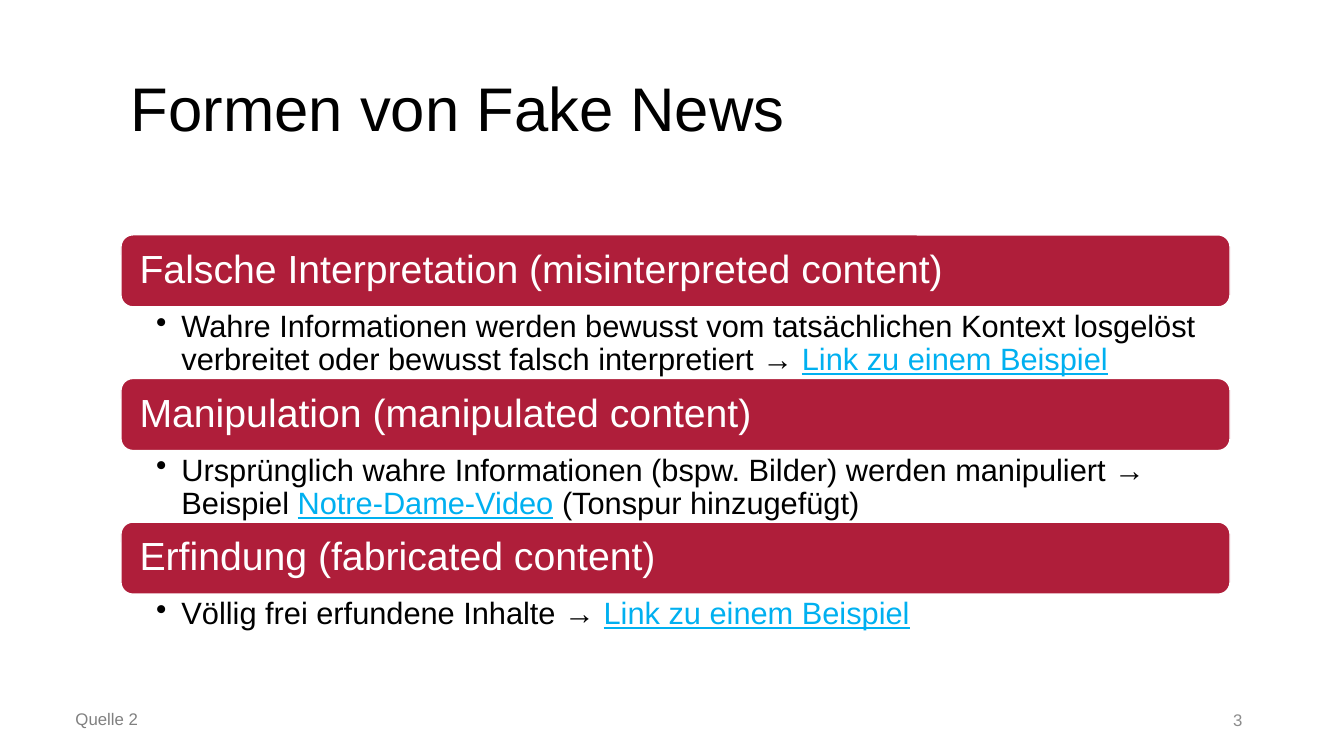
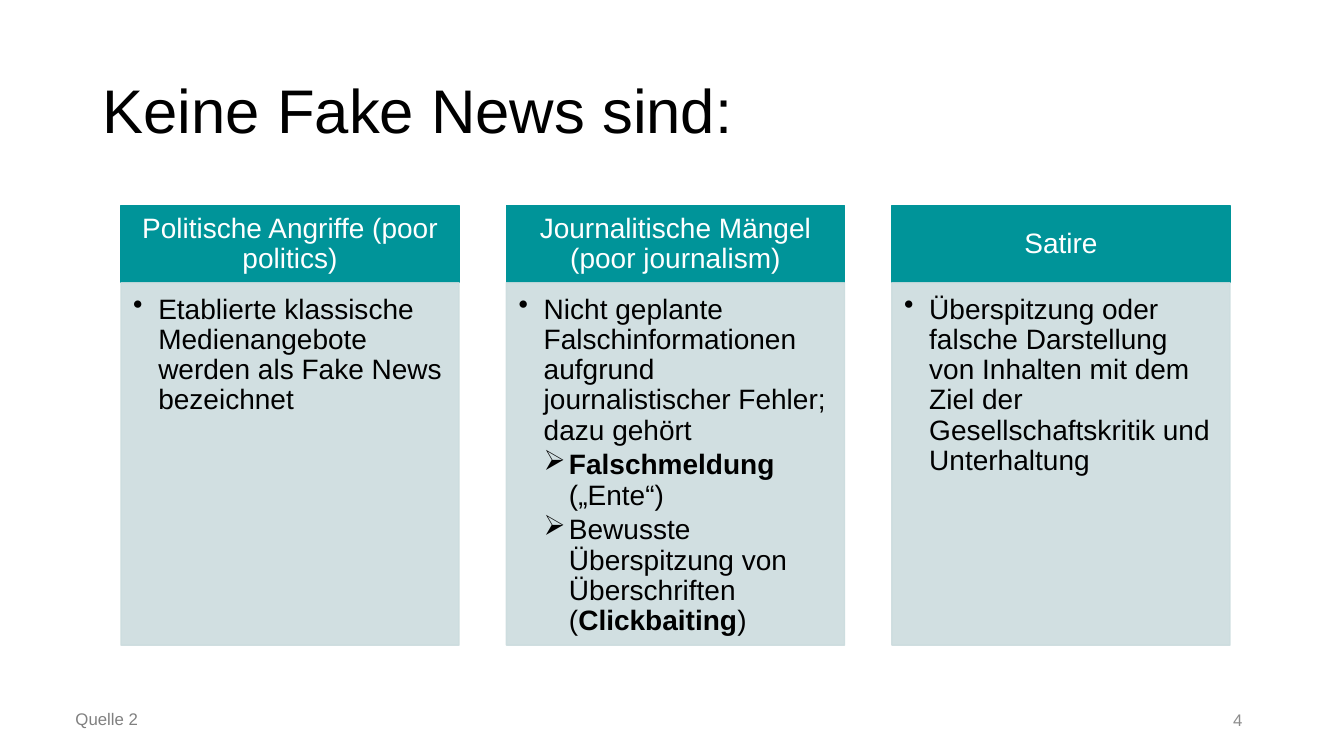
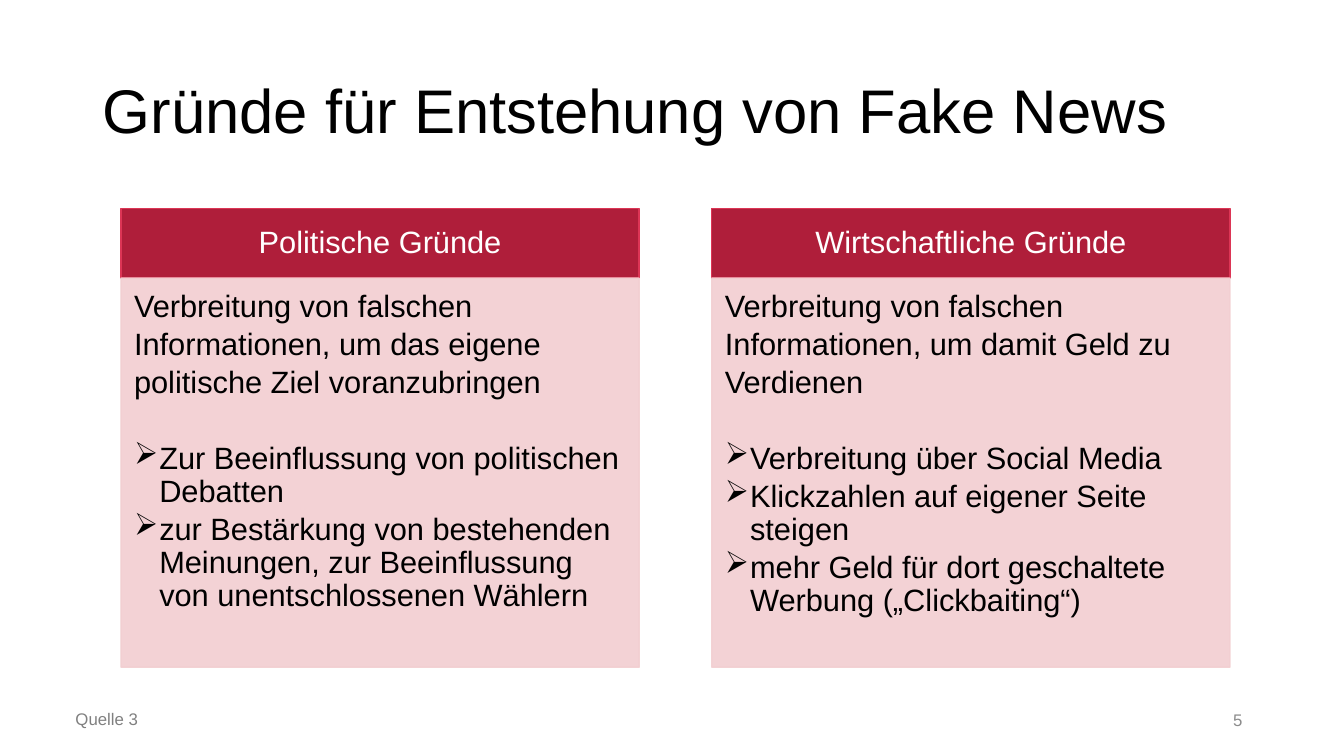
from dataclasses import dataclass

from pptx import Presentation
from pptx import util as u
from pptx.dml.color import RGBColor
from pptx.enum import shapes, text
from pptx.oxml import ns, xmlchemy


@dataclass(frozen=True)
class Theme:
    font: str = "Arial"
    black: str = "000000"
    white: str = "FFFFFF"
    red: str = "AF1E3A"
    red_edge: str = "DC3555"
    pink: str = "F2CED1"
    teal: str = "009499"
    mist: str = "CCDCDE"
    link: str = "00B0F0"
    source: str = "808080"
    number: str = "8C8C8C"
    title_size: float = 44
    bar_size: float = 28
    body_size: float = 22
    compact_size: float = 20
    footer_size: float = 12
    line_spacing: float = 0.9
    space_after: float = 3.3
    block_gap: float = 30.4
    hang: float = 0.25
    panel_opacity: int = 90


@dataclass(frozen=True)
class Box:
    left: float
    top: float
    width: float
    height: float

    def lengths(self):
        return [u.Inches(value) for value in (self.left, self.top, self.width, self.height)]


@dataclass(frozen=True)
class Item:
    """One paragraph: runs are (text, style) pairs, style being "", "bold" or "link"."""
    runs: tuple
    bullet: str = ""
    level: int = 1
    space_after: float = 0


@dataclass(frozen=True)
class ColumnStyle:
    header_fill: str
    header_line: str
    panel_fill: str
    size: float
    header_height: float
    header_insets: tuple
    panel_insets: tuple


THEME = Theme()
CONTENT_LEFT, CONTENT_WIDTH = 1.2, 11
COLUMN_GAP_RATIO = 0.14
DOT, ARROW = "•", "➢"
DEFAULT_INSETS = (0.1, 0.05, 0.1, 0.05)

TEAL_COLUMNS = ColumnStyle(THEME.teal, THEME.teal, THEME.mist, THEME.compact_size, 0.765,
                           (0.16, 0.09, 0.16, 0.09), (0.12, 0.12, 0.16, 0.17))
RED_COLUMNS = ColumnStyle(THEME.red, THEME.red_edge, THEME.pink, THEME.body_size, 0.69,
                          (0.17, 0.1, 0.17, 0.1), (0.13, 0.13, 0.17, 0.19))

FORMS = [
    ("Falsche Interpretation (misinterpreted content)", 0.71, Item((
        ("Wahre Informationen werden bewusst vom tatsächlichen Kontext losgelöst "
         "verbreitet oder bewusst falsch interpretiert → ", ""),
        ("Link zu einem Beispiel", "link")), DOT)),
    ("Manipulation (manipulated content)", 0.71, Item((
        ("Ursprünglich wahre Informationen (bspw. Bilder) werden manipuliert → Beispiel ", ""),
        ("Notre-Dame-Video", "link"),
        (" (Tonspur hinzugefügt)", "")), DOT)),
    ("Erfindung (fabricated content)", 0.51, Item((
        ("Völlig frei erfundene Inhalte → ", ""),
        ("Link zu einem Beispiel", "link")), DOT)),
]


def plain(content, bullet="", **options):
    return Item(((content, ""),), bullet, **options)


def reason(header, intro_lines, points):
    """A column whose intro lines are set apart from its arrow points."""
    *first_lines, last_line = intro_lines
    items = [plain(line) for line in first_lines]
    items.append(plain(last_line, space_after=THEME.block_gap))
    return header, items + [plain(point, ARROW) for point in points]


NOT_FAKE_NEWS = [
    ("Politische Angriffe (poor politics)", [
        plain("Etablierte klassische Medienangebote werden als Fake News bezeichnet", DOT)]),
    ("Journalitische Mängel (poor journalism)", [
        plain("Nicht geplante Falschinformationen aufgrund journalistischer Fehler; "
              "dazu gehört", DOT),
        Item((("Falschmeldung", "bold"), (" („Ente“)", "")), ARROW, 2),
        Item((("Bewusste Überspitzung von Überschriften (", ""),
              ("Clickbaiting", "bold"), (")", "")), ARROW, 2)]),
    ("Satire", [
        plain("Überspitzung oder falsche Darstellung von Inhalten mit dem Ziel der "
              "Gesellschaftskritik und Unterhaltung", DOT)]),
]

REASONS = [
    reason("Politische Gründe",
           ["Verbreitung von falschen", "Informationen, um das eigene",
            "politische Ziel voranzubringen"],
           ["Zur Beeinflussung von politischen Debatten",
            "zur Bestärkung von bestehenden Meinungen, zur Beeinflussung von "
            "unentschlossenen Wählern"]),
    reason("Wirtschaftliche Gründe",
           ["Verbreitung von falschen", "Informationen, um damit Geld zu", "Verdienen"],
           ["Verbreitung über Social Media", "Klickzahlen auf eigener Seite steigen",
            "mehr Geld für dort geschaltete Werbung („Clickbaiting“)"]),
]


def set_all(target, values):
    for name, value in values.items():
        setattr(target, name, value)


def set_frame(shape, insets=DEFAULT_INSETS, anchor=text.MSO_ANCHOR.TOP):
    left, top, right, bottom = (u.Inches(inset) for inset in insets)
    set_all(shape.text_frame, {
        "word_wrap": True, "vertical_anchor": anchor,
        "margin_left": left, "margin_top": top,
        "margin_right": right, "margin_bottom": bottom})


def add_run(paragraph, content, size, color, style=""):
    run = paragraph.add_run()
    run.text = content
    set_all(run.font, {"name": THEME.font, "size": u.Pt(size),
                       "bold": style == "bold", "underline": style == "link"})
    run.font.color.rgb = RGBColor.from_string(THEME.link if style == "link" else color)


def write_line(shape, content, size, color, align=text.PP_ALIGN.LEFT):
    paragraph = shape.text_frame.paragraphs[0]
    set_all(paragraph, {"alignment": align, "line_spacing": THEME.line_spacing})
    add_run(paragraph, content, size, color)


def write_items(shape, items, size):
    frame = shape.text_frame
    for index, item in enumerate(items):
        paragraph = frame.add_paragraph() if index else frame.paragraphs[0]
        set_all(paragraph, {"alignment": text.PP_ALIGN.LEFT,
                            "line_spacing": THEME.line_spacing,
                            "space_after": u.Pt(item.space_after or THEME.space_after)})
        for content, style in item.runs:
            add_run(paragraph, content, size, THEME.black, style)
        if item.bullet:
            set_bullet(paragraph, item)


def set_bullet(paragraph, item):
    properties = paragraph._p.get_or_add_pPr()
    properties.set("marL", str(u.Inches(THEME.hang * item.level)))
    properties.set("indent", str(-u.Inches(THEME.hang)))
    bullet = xmlchemy.OxmlElement("a:buChar")
    bullet.set("char", item.bullet)
    properties.append(bullet)


def add_text_box(slide, box, insets=DEFAULT_INSETS, anchor=text.MSO_ANCHOR.TOP):
    shape = slide.shapes.add_textbox(*box.lengths())
    set_frame(shape, insets, anchor)
    return shape


def add_panel(slide, kind, box, fill, line, insets, anchor, opacity=100):
    shape = slide.shapes.add_shape(kind, *box.lengths())
    shape.shadow.inherit = False
    shape.fill.solid()
    shape.fill.fore_color.rgb = RGBColor.from_string(fill)
    shape.line.color.rgb = RGBColor.from_string(line)
    shape.line.width = u.Pt(1)
    if opacity < 100:
        for color in shape.element.spPr.iter(ns.qn("a:srgbClr")):
            alpha = xmlchemy.OxmlElement("a:alpha")
            alpha.set("val", str(opacity * 1000))
            color.append(alpha)
    set_frame(shape, insets, anchor)
    return shape


def add_base_slide(presentation, title, title_box, source, number):
    """A blank slide with title, source note and slide number."""
    slide = presentation.slides.add_slide(presentation.slide_layouts[6])
    middle = text.MSO_ANCHOR.MIDDLE
    write_line(add_text_box(slide, title_box, anchor=middle),
               title, THEME.title_size, THEME.black)
    write_line(add_text_box(slide, Box(0.65, 7, 3.38, 0.3)),
               source, THEME.footer_size, THEME.source)
    write_line(add_text_box(slide, Box(9.42, 6.95, 3, 0.4), anchor=middle),
               number, THEME.footer_size, THEME.number, text.PP_ALIGN.RIGHT)
    return slide


def add_bar_list(slide, box, entries, bar_height=0.715):
    """Stack rounded bars, each followed by its explanation."""
    top = box.top
    for heading, body_height, item in entries:
        bar = add_panel(slide, shapes.MSO_SHAPE.ROUNDED_RECTANGLE,
                        Box(box.left, top, box.width, bar_height), THEME.red, THEME.white,
                        (0.15, 0.12, 0.15, 0.12), text.MSO_ANCHOR.MIDDLE)
        write_line(bar, heading, THEME.bar_size, THEME.white)
        top += bar_height
        body = add_text_box(slide, Box(box.left, top, box.width, body_height),
                            (0.35, 0.04, 0.22, 0.04))
        write_items(body, [item], THEME.body_size)
        top += body_height


def add_columns(slide, box, columns, style):
    """Spread headed columns evenly over the box."""
    count = len(columns)
    width = box.width / (count + COLUMN_GAP_RATIO * (count - 1))
    for index, (heading, items) in enumerate(columns):
        left = box.left + index * width * (1 + COLUMN_GAP_RATIO)
        header = add_panel(slide, shapes.MSO_SHAPE.RECTANGLE,
                           Box(left, box.top, width, style.header_height),
                           style.header_fill, style.header_line,
                           style.header_insets, text.MSO_ANCHOR.MIDDLE)
        write_line(header, heading, style.size, THEME.white, text.PP_ALIGN.CENTER)
        panel = add_panel(slide, shapes.MSO_SHAPE.RECTANGLE,
                          Box(left, box.top + style.header_height, width,
                              box.height - style.header_height),
                          style.panel_fill, style.panel_fill, style.panel_insets,
                          text.MSO_ANCHOR.TOP, THEME.panel_opacity)
        write_items(panel, items, style.size)


def main():
    presentation = Presentation()
    set_all(presentation, {"slide_width": u.Inches(13.33), "slide_height": u.Inches(7.5)})
    title_box = Box(0.92, 0.4, 11.5, 1.45)

    forms = add_base_slide(presentation, "Formen von Fake News",
                           Box(1.2, 0.31, 11, 1.59), "Quelle 2", "3")
    add_bar_list(forms, Box(CONTENT_LEFT, 2.33, CONTENT_WIDTH, 4.08), FORMS)

    exclusions = add_base_slide(presentation, "Keine Fake News sind:",
                                title_box, "Quelle 2", "4")
    add_columns(exclusions, Box(CONTENT_LEFT, 2.04, CONTENT_WIDTH, 4.36),
                NOT_FAKE_NEWS, TEAL_COLUMNS)

    reasons = add_base_slide(presentation, "Gründe für Entstehung von Fake News",
                             title_box, "Quelle 3", "5")
    add_columns(reasons, Box(CONTENT_LEFT, 2.07, CONTENT_WIDTH, 4.55),
                REASONS, RED_COLUMNS)

    presentation.save("out.pptx")


if __name__ == "__main__":
    main()
